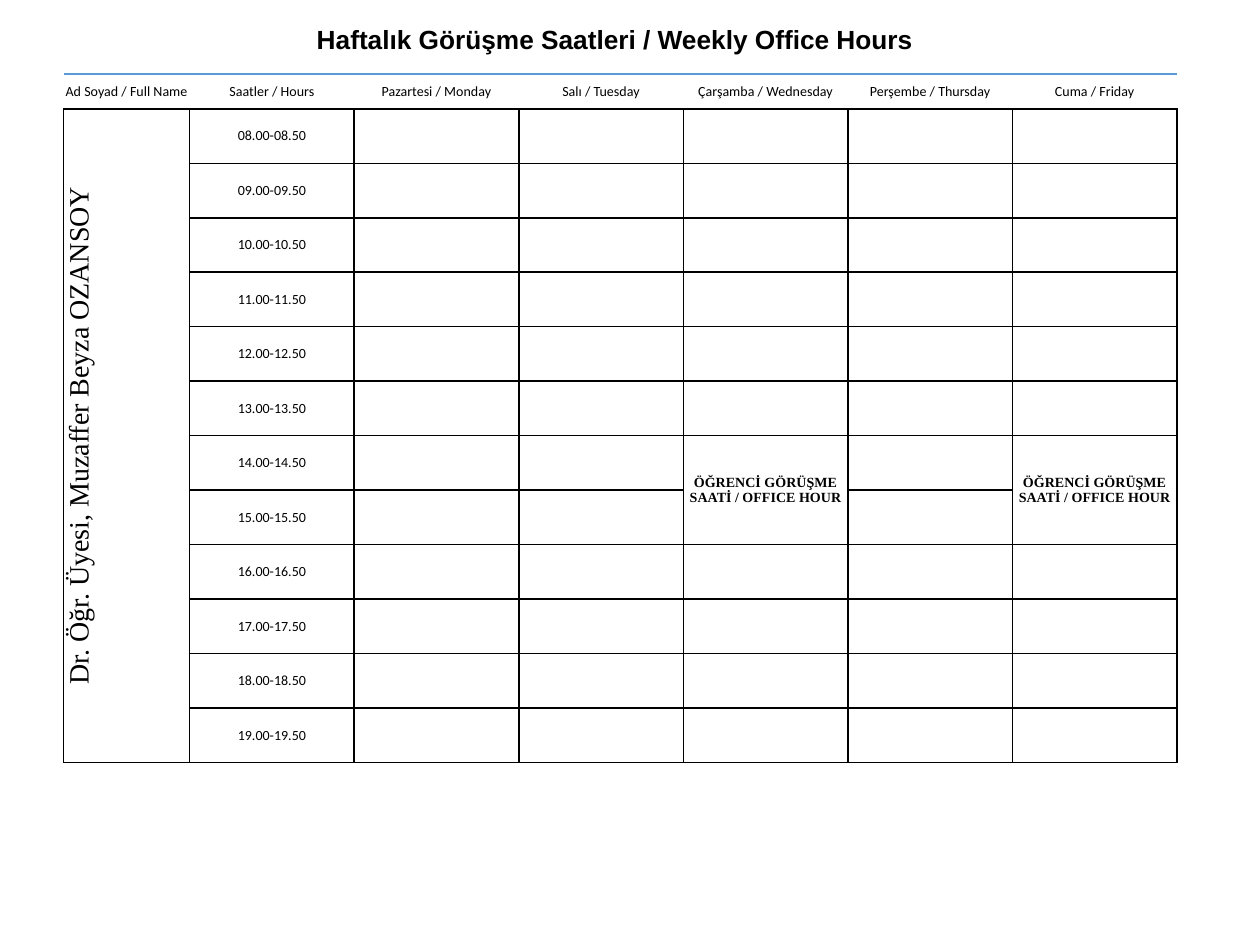
from lxml.etree import SubElement
from pptx import Presentation
from pptx.dml.color import RGBColor
from pptx.enum.text import MSO_ANCHOR, MSO_AUTO_SIZE, PP_ALIGN
from pptx.oxml.ns import qn
from pptx.util import Pt

BLACK = RGBColor(0, 0, 0)
BLUE = RGBColor(0x5B, 0x9B, 0xD4)

HEADS = ["Ad Soyad / Full Name", "Saatler / Hours", "Pazartesi / Monday",
         "Salı / Tuesday", "Çarşamba / Wednesday", "Perşembe / Thursday",
         "Cuma / Friday"]
HOURS = [f"{hour:02}.00-{hour:02}.50" for hour in range(8, 20)]
NAME = "Dr. Öğr. Üyesi, Muzaffer Beyza OZANSOY"
VISIT = "ÖĞRENCİ GÖRÜŞME SAATİ / OFFICE HOUR"
VISIT_ROW = HOURS.index("14.00-14.50") + 1
VISIT_COLS = [4, 6]


def write(frame, text, size=8, font="Calibri", bold=False,
          align=PP_ALIGN.CENTER):
    frame.word_wrap = True
    para = frame.paragraphs[0]
    para.alignment = align
    run = para.add_run()
    run.text = text
    run.font.size = Pt(size)
    run.font.name = font
    run.font.bold = bold
    run.font.color.rgb = BLACK


def edge(cell, side, color):
    line = SubElement(cell._tc.get_or_add_tcPr(), qn(f"a:ln{side}"), w=str(Pt(1)))
    if color is None:
        SubElement(line, qn("a:noFill"))
    else:
        fill = SubElement(line, qn("a:solidFill"))
        SubElement(fill, qn("a:srgbClr"), val=str(color))


def style(cell, head):
    cell.margin_left = cell.margin_right = 0
    cell.margin_top = cell.margin_bottom = 0
    cell.vertical_anchor = MSO_ANCHOR.MIDDLE
    sides = {"L": None, "R": None, "T": BLUE, "B": BLACK} if head else \
        dict.fromkeys("LRTB", BLACK)
    for side, color in sides.items():
        edge(cell, side, color)
    cell.fill.background()


def add_title(slide, left, top, width, height):
    title = slide.shapes.title
    title.left, title.top = Pt(left), Pt(top)
    title.width, title.height = Pt(width), Pt(height)
    frame = title.text_frame
    frame.margin_left = frame.margin_right = frame.margin_bottom = 0
    frame.margin_top = Pt(2)
    frame.vertical_anchor = MSO_ANCHOR.TOP
    frame.auto_size = MSO_AUTO_SIZE.SHAPE_TO_FIT_TEXT
    write(frame, "Haftalık Görüşme Saatleri / Weekly Office Hours", size=15,
          font="Arial", bold=True, align=PP_ALIGN.LEFT)


def add_grid(slide, left, top, width, height, first=72, head=19.8):
    table = slide.shapes.add_table(
        len(HOURS) + 1, len(HEADS), Pt(left), Pt(top), Pt(width), Pt(height)).table
    table.first_row = table.horz_banding = False
    for i, col in enumerate(table.columns):
        col.width = Pt((width - first) / (len(HEADS) - 1) if i else first)
    for i, row in enumerate(table.rows):
        row.height = Pt((height - head) / len(HOURS) if i else head)
        for cell in row.cells:
            style(cell, head=i == 0)

    for i, text in enumerate(HEADS):
        write(table.cell(0, i).text_frame, text)
    for i, text in enumerate(HOURS, 1):
        write(table.cell(i, 1).text_frame, text)

    name = table.cell(1, 0)
    name.merge(table.cell(len(HOURS), 0))
    name._tc.get_or_add_tcPr().set("vert", "vert270")
    write(name.text_frame, NAME, size=16, font="Times New Roman")
    for col in VISIT_COLS:
        cell = table.cell(VISIT_ROW, col)
        cell.merge(table.cell(VISIT_ROW + 1, col))
        write(cell.text_frame, VISIT, font="Times New Roman", bold=True)


def main():
    deck = Presentation()
    deck.slide_width, deck.slide_height = Pt(720), Pt(540)
    slide = deck.slides.add_slide(deck.slide_layouts[5])
    add_grid(slide, 36.4, 42.4, 636.3, 393.6)
    add_title(slide, 181, 11.5, 350, 19.5)
    deck.save("out.pptx")


if __name__ == "__main__":
    main()
